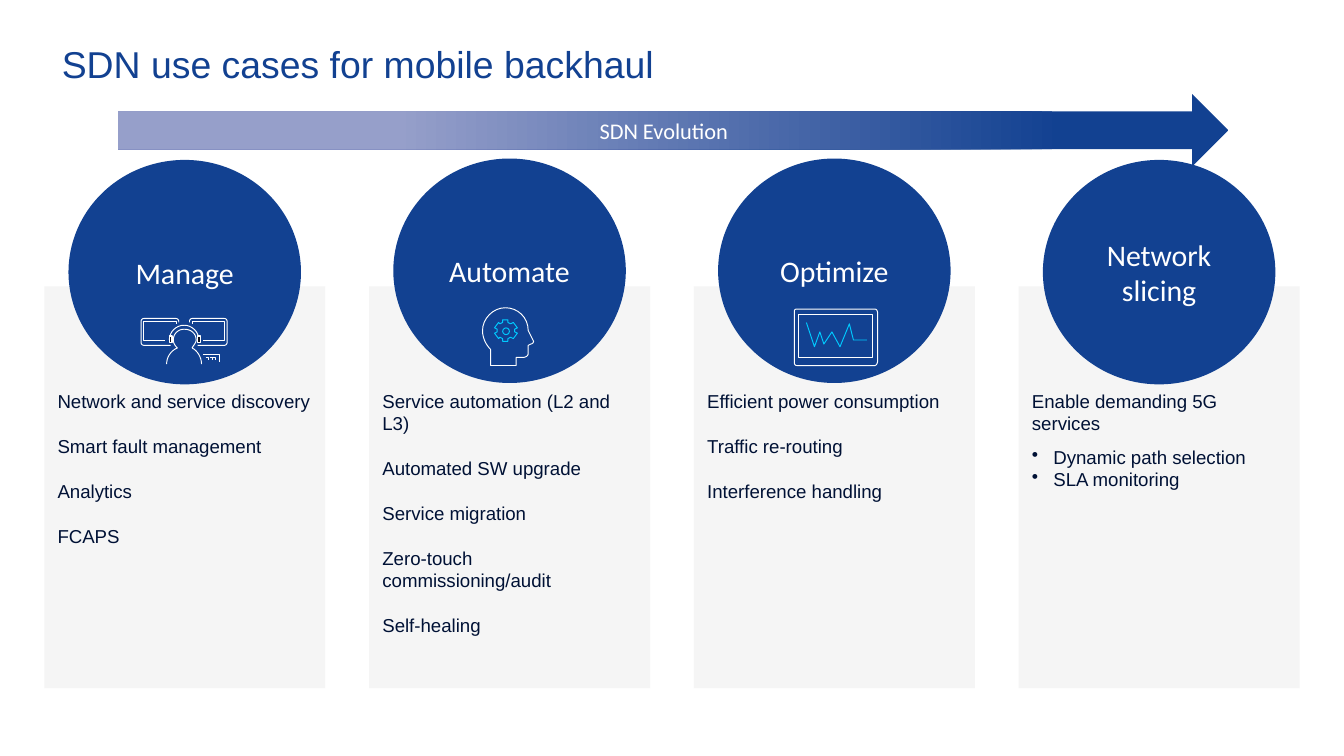
from lxml.etree import SubElement
from pptx import Presentation
from pptx.dml.color import RGBColor
from pptx.enum.shapes import MSO_SHAPE
from pptx.enum.text import MSO_ANCHOR, PP_ALIGN
from pptx.oxml.ns import qn
from pptx.util import Inches, Pt

# Content
TITLE = "SDN use cases for mobile backhaul"
ARROW = "SDN Evolution"
COLUMNS = [  # heading, circle top, paragraphs, bullets
    ("Manage", 1.19, ["Network and service discovery", "Smart fault management",
                      "Analytics", "FCAPS"], []),
    ("Automate", 1.18, ["Service automation (L2 and L3)", "Automated SW upgrade",
                        "Service migration", "Zero-touch commissioning/audit",
                        "Self-healing"], []),
    ("Optimize", 1.18, ["Efficient power consumption", "Traffic re-routing",
                        "Interference handling"], []),
    ("Network slicing", 1.19, ["Enable demanding 5G services"],
     ["Dynamic path selection", "SLA monitoring"]),
]
BLUE, PALE_BLUE, NAVY = "124191", "969FCA", "001135"
GREY, WHITE, CYAN, BLACK = "F2F2F2", "FFFFFF", "00C9FF", "0E0F1C"
LEFT, LAST_LEFT, PANEL_W = 0.33, 7.58, 2.09
PITCH = (LAST_LEFT - LEFT) / (len(COLUMNS) - 1)
PANEL_TOP, PANEL_BOTTOM = 2.13, 5.12

# Icon outlines: a pair is a line to a point, six numbers are a Bezier curve
OPERATOR = [(1.5, 2.71), (1.5, 2.66, 1.47, 2.61, 1.43, 2.59),
            (1.44, 2.57, 1.46, 2.55, 1.46, 2.53), (1.46, 2.48, 1.42, 2.45, 1.37, 2.45),
            (1.33, 2.45, 1.29, 2.48, 1.29, 2.53), (1.29, 2.55, 1.3, 2.57, 1.32, 2.59),
            (1.27, 2.61, 1.24, 2.66, 1.24, 2.71)]
HEADBAND = [(1.26, 2.53), (1.26, 2.47, 1.31, 2.42, 1.37, 2.42),
            (1.43, 2.42, 1.48, 2.47, 1.48, 2.53)]
SCREEN = [(1.51, 2.53), (1.67, 2.53), (1.67, 2.39), (1.43, 2.39), (1.43, 2.41)]
MONITOR = [(1.47, 2.57), (1.67, 2.57), (1.68, 2.57, 1.69, 2.56, 1.69, 2.55),
           (1.69, 2.39), (1.69, 2.38, 1.68, 2.37, 1.67, 2.37), (1.43, 2.37),
           (1.42, 2.37, 1.41, 2.38, 1.41, 2.39), (1.41, 2.4)]
KEYBOARD = [(1.51, 2.64), (1.63, 2.64), (1.63, 2.69)]
KEYS = [[(x, 2.66), (x + 0.02, 2.66), (x + 0.02, 2.68)] for x in (1.53, 1.56, 1.58)]
GEAR = [(3.83, 2.46), (3.83, 2.45), (3.85, 2.44), (3.82, 2.4), (3.8, 2.41),
        (3.78, 2.4), (3.78, 2.38), (3.74, 2.38), (3.74, 2.4), (3.72, 2.41),
        (3.71, 2.4), (3.68, 2.44), (3.7, 2.45), (3.7, 2.47), (3.68, 2.48),
        (3.71, 2.52), (3.72, 2.51), (3.74, 2.52), (3.74, 2.54), (3.78, 2.54),
        (3.78, 2.52), (3.8, 2.51), (3.82, 2.52), (3.85, 2.48), (3.83, 2.47), (3.83, 2.46)]
HEAD = [(3.97, 2.54), (3.93, 2.46), (3.93, 2.36, 3.85, 2.29, 3.76, 2.29),
        (3.67, 2.29, 3.59, 2.37, 3.59, 2.46), (3.59, 2.52, 3.62, 2.57, 3.65, 2.6),
        (3.65, 2.72), (3.84, 2.72), (3.84, 2.66), (3.89, 2.66),
        (3.91, 2.66, 3.93, 2.65, 3.93, 2.63), (3.93, 2.57), (3.95, 2.56),
        (3.96, 2.56, 3.97, 2.55, 3.97, 2.54)]
TABLET = [(6.51, 2.72), (5.93, 2.72), (5.91, 2.72, 5.91, 2.7, 5.91, 2.69),
          (5.91, 2.33), (5.91, 2.31, 5.91, 2.3, 5.93, 2.3), (6.51, 2.3),
          (6.52, 2.3, 6.53, 2.31, 6.53, 2.33), (6.53, 2.69),
          (6.53, 2.7, 6.52, 2.72, 6.51, 2.72)]
DISPLAY = [(6.49, 2.66), (5.94, 2.66), (5.94, 2.34), (6.49, 2.34), (6.49, 2.66)]
SIGNAL = [(6, 2.4), (6.06, 2.58), (6.1, 2.47), (6.13, 2.56), (6.19, 2.47),
          (6.25, 2.58), (6.32, 2.41), (6.35, 2.53), (6.45, 2.53)]


def rgb(color):
    return RGBColor.from_string(color)


def style(sp, fill, line, width=0.5):
    sp.shadow.inherit = False
    if fill:
        sp.fill.solid()
        sp.fill.fore_color.rgb = rgb(fill)
    else:
        sp.fill.background()
    if line:
        sp.line.color.rgb = rgb(line)
        sp.line.width = Pt(width)
    else:
        sp.line.fill.background()


def add_shape(shapes, kind, box, fill=None, line=None, width=0.5):
    sp = shapes.add_shape(kind, *map(Inches, box))
    style(sp, fill, line, width)
    return sp


def frame(sp, inset, anchor):
    tf = sp.text_frame
    tf.word_wrap = True
    tf.vertical_anchor = anchor
    tf.margin_left = tf.margin_right = tf.margin_top = tf.margin_bottom = Inches(inset)
    return tf


def add_run(p, text, size, font, color, align=PP_ALIGN.LEFT):
    p.alignment = align
    r = p.add_run()
    r.text = text
    r.font.size, r.font.name = Pt(size), font
    r.font.color.rgb = rgb(color)


def label(sp, text, size):
    tf = frame(sp, 0.08, MSO_ANCHOR.MIDDLE)
    add_run(tf.paragraphs[0], text, size, "Calibri", WHITE, PP_ALIGN.CENTER)


def add_bullet(p):
    pPr = p._p.get_or_add_pPr()
    pPr.set("marL", str(Inches(0.16)))
    pPr.set("indent", str(Inches(-0.19)))
    SubElement(pPr, qn("a:buChar"), char="•")


def mirror(path, axis=1.37):
    return [tuple(2 * axis - v if i % 2 == 0 else v for i, v in enumerate(step))
            for step in path]


def outline(shapes, path, color=WHITE, steps=8):
    points = [path[0]]
    for step in path[1:]:
        if len(step) == 2:
            points.append(step)
            continue
        ends = [points[-1], step[:2], step[2:4], step[4:]]
        for t in (i / steps for i in range(1, steps + 1)):
            weights = ((1 - t) ** 3, 3 * t * (1 - t) ** 2, 3 * t * t * (1 - t), t ** 3)
            points.append(tuple(sum(w * e[k] for w, e in zip(weights, ends))
                                for k in (0, 1)))
    points = [(Inches(x), Inches(y)) for x, y in points]
    fb = shapes.build_freeform(*points[0])
    fb.add_line_segments(points[1:], close=points[0] == points[-1])
    style(fb.convert_to_shape(), None, color)


prs = Presentation()
prs.slide_width = Inches(10)
prs.slide_height = prs.slide_width * 9 // 16
s = prs.slides.add_slide(prs.slide_layouts[5])

# Title
title = s.shapes.title
title.left, title.top, title.width, title.height = map(Inches, (0.46, 0.31, 9.09, 0.34))
add_run(frame(title, 0, MSO_ANCHOR.TOP).paragraphs[0], TITLE, 20, "Arial", BLUE)

# Evolution arrow
arrow = add_shape(s.shapes, MSO_SHAPE.RIGHT_ARROW, (0.88, 0.7, 8.26, 0.54), BLUE)
arrow.adjustments[0] = 0.52
arrow.fill.gradient()
arrow.fill.gradient_angle = 180
for stop, position, color in zip(arrow.fill.gradient_stops, (0.15, 0.75), (BLUE, PALE_BLUE)):
    stop.position = position
    stop.color.rgb = rgb(color)
label(arrow, ARROW, 12)

# Columns: panel with text, circle with heading
for i, (heading, circle_top, paragraphs, bullets) in enumerate(COLUMNS):
    x = LEFT + i * PITCH
    panel = add_shape(s.shapes, MSO_SHAPE.RECTANGLE,
                      (x, PANEL_TOP, PANEL_W, PANEL_BOTTOM - PANEL_TOP), GREY)
    grey = panel._element.spPr.find(qn("a:solidFill")).find(qn("a:srgbClr"))
    SubElement(grey, qn("a:alpha"), val="75000")
    tf = frame(panel, 0.1, MSO_ANCHOR.TOP)
    tf.margin_top = Inches(0.77)
    for n, text in enumerate(paragraphs + bullets):
        p = tf.paragraphs[0] if n == 0 else tf.add_paragraph()
        add_run(p, text, 10, "Arial", NAVY)
        if n >= len(paragraphs):
            add_bullet(p)
        else:
            p.space_before, p.space_after = Pt(6 if n else 0), Pt(6)
    circle = add_shape(s.shapes, MSO_SHAPE.OVAL, (x + 0.18, circle_top, 1.73, 1.67), BLUE)
    label(circle, heading, 16)

# Operator icon
icon = s.shapes.add_group_shape().shapes
for path in [OPERATOR, HEADBAND, SCREEN, MONITOR, mirror(SCREEN), mirror(MONITOR),
             KEYBOARD] + KEYS:
    outline(icon, path)
for x in (1.26, 1.47):
    add_shape(icon, MSO_SHAPE.RECTANGLE, (x, 2.5, 0.02, 0.05), BLACK, WHITE, 0.75)

# Thinking head icon
icon = s.shapes.add_group_shape().shapes
outline(icon, GEAR, CYAN)
add_shape(icon, MSO_SHAPE.OVAL, (3.74, 2.44, 0.05, 0.05), None, CYAN)
outline(icon, HEAD)

# Signal display icon
icon = s.shapes.add_group_shape().shapes
outline(icon, TABLET)
outline(icon, DISPLAY)
outline(icon, SIGNAL, CYAN)

prs.save("out.pptx")
